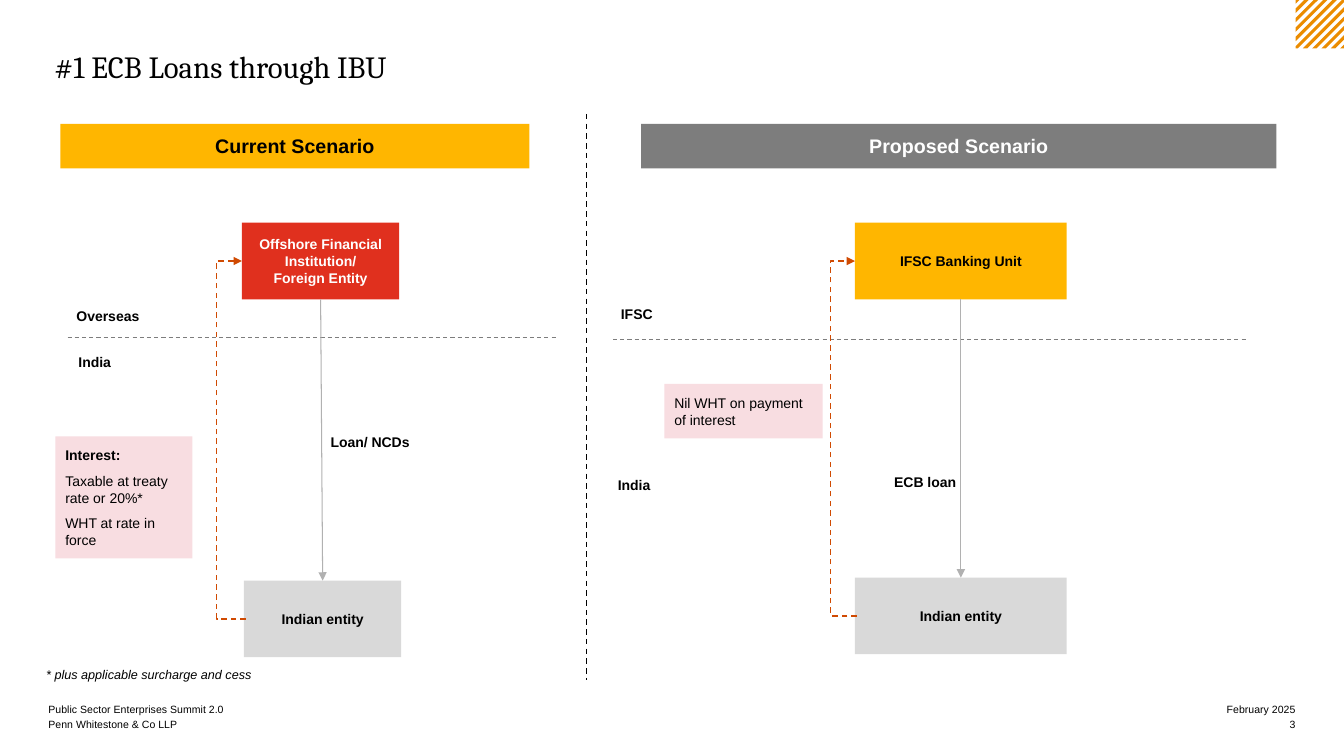
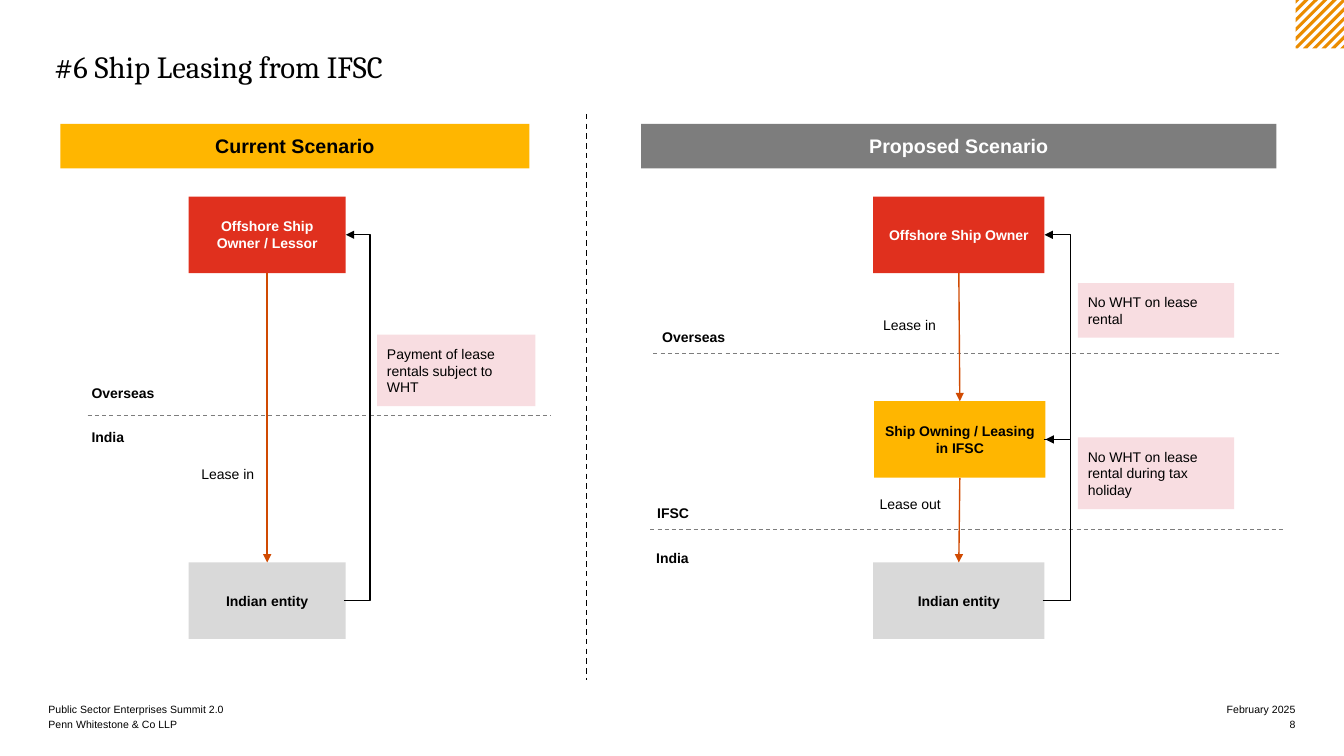
import dataclasses
import typing

import lxml.etree
import pptx
import pptx.dml.color
import pptx.enum.dml
import pptx.enum.shapes
import pptx.enum.text
import pptx.oxml.ns
import pptx.util

Inches = pptx.util.Inches
Align = pptx.enum.text.PP_ALIGN
Anchor = pptx.enum.text.MSO_ANCHOR
Connector = pptx.enum.shapes.MSO_CONNECTOR

BLACK, WHITE = "000000", "FFFFFF"
AMBER, RED, PINK = "FFB600", "E0301E", "F8DDE1"
DARK_GREY, MID_GREY, LIGHT_GREY = "7D7D7D", "B1B1B1", "D9D9D9"
RUST, STRIPE = "D04A02", "EB8C00"
SLIDE_WIDTH, SLIDE_HEIGHT = 13.33, 7.5
CURRENT_BOX = (0.6, 1.23, 4.65, 5.26)
PROPOSED_BOX = (6.36, 1.23, 6.3, 5.26)
ENTITY_HEIGHT = 0.76


def rgb(value):
    return pptx.dml.color.RGBColor.from_string(value)


def write(frame, paragraphs, size=10, color=BLACK, bold=False, italic=False,
          font="Arial", align=Align.LEFT, anchor=Anchor.MIDDLE,
          insets=(0.1, 0.1), gap=0):
    frame.word_wrap = True
    frame.auto_size = pptx.enum.text.MSO_AUTO_SIZE.NONE
    frame.vertical_anchor = anchor
    frame.margin_left = frame.margin_right = Inches(insets[0])
    frame.margin_top = frame.margin_bottom = Inches(insets[1])
    for index, content in enumerate(paragraphs):
        paragraph = frame.paragraphs[0] if index == 0 else frame.add_paragraph()
        paragraph.alignment = align
        paragraph.space_before = pptx.util.Pt(gap if index else 0)
        paragraph.space_after = pptx.util.Pt(gap)
        text, run_bold = content if isinstance(content, tuple) else (content, bold)
        run = paragraph.add_run()
        run.text = text
        run.font.name = font
        run.font.size = pptx.util.Pt(size)
        run.font.bold = run_bold
        run.font.italic = italic
        run.font.color.rgb = rgb(color)


def add_text(slide, box, paragraphs, **style):
    caption = slide.shapes.add_textbox(*map(Inches, box))
    write(caption.text_frame, paragraphs, **style)


def add_block(slide, box, fill, paragraphs, **style):
    block = slide.shapes.add_shape(
        pptx.enum.shapes.MSO_SHAPE.RECTANGLE, *map(Inches, box))
    block.shadow.inherit = False
    block.fill.solid()
    block.fill.fore_color.rgb = rgb(fill)
    block.line.fill.background()
    write(block.text_frame, paragraphs, **style)


def add_line(slide, start, end, color, width=1.0, dashed=False, arrow=False,
             lane=None):
    kind = Connector.STRAIGHT if lane is None else Connector.ELBOW
    line = slide.shapes.add_connector(kind, *map(Inches, (*start, *end)))
    line.line.color.rgb = rgb(color)
    line.line.width = pptx.util.Pt(width)
    if dashed:
        line.line.dash_style = pptx.enum.dml.MSO_LINE.DASH
    qn = pptx.oxml.ns.qn
    properties = line._element.spPr
    if arrow:
        lxml.etree.SubElement(
            properties.find(qn("a:ln")), qn("a:tailEnd"), type="triangle")
    lxml.etree.SubElement(properties, qn("a:effectLst"))
    if lane is not None:
        ratio = (lane - start[0]) / (end[0] - start[0])
        guides = properties.find(qn("a:prstGeom")).get_or_add_avLst()
        lxml.etree.SubElement(guides, qn("a:gd"), name="adj1",
                              fmla=f"val {round(ratio * 100000)}")


@dataclasses.dataclass
class Entity:
    left: float
    top: float
    width: float

    @property
    def center(self):
        return self.left + self.width / 2

    @property
    def middle(self):
        return self.top + ENTITY_HEIGHT / 2

    @property
    def bottom(self):
        return self.top + ENTITY_HEIGHT


@dataclasses.dataclass
class Scenario:
    slide: typing.Any
    left: float
    top: float
    width: float
    height: float

    def place(self, x, y, width, height):
        return self.left + x, self.top + y, width, height

    def header(self, title, fill, color):
        add_block(self.slide, self.place(0, 0, self.width, 0.44), fill, [title],
                  size=14, color=color, bold=True, align=Align.CENTER)

    def entity(self, x, y, width, fill, *lines):
        entity = Entity(self.left + x, self.top + y, width)
        add_block(self.slide, self.place(x, y, width, ENTITY_HEIGHT), fill, lines,
                  color=WHITE if fill == RED else BLACK, bold=True,
                  align=Align.CENTER, insets=(0.1, 0.05))
        return entity

    def label(self, x, y, width, text, bold=True, align=Align.LEFT):
        add_text(self.slide, self.place(x, y, width, 0.37), [text],
                 bold=bold, align=align)

    def note(self, x, y, width, height, *paragraphs):
        add_block(self.slide, self.place(x, y, width, height), PINK, paragraphs,
                  gap=3 if len(paragraphs) > 1 else 0)

    def border(self, x, y, length):
        start = self.left + x, self.top + y
        add_line(self.slide, start, (start[0] + length, start[1]), DARK_GREY,
                 width=0.75, dashed=True)

    def flow(self, source, target, color, width=1.0):
        add_line(self.slide, (source.center, source.bottom),
                 (target.center, target.top), color, width, arrow=True)

    def payment(self, payer, payee, x, color, dashed=False):
        lane = self.left + x
        if lane < payer.left:
            start_x, end_x = payer.left + 0.02, payee.left
        else:
            start_x = payer.left + payer.width - 0.02
            end_x = payee.left + payee.width
        add_line(self.slide, (start_x, payer.middle), (end_x, payee.middle),
                 color, dashed=dashed, arrow=True, lane=lane)


def stripe_ends(total, side):
    if total <= side:
        return (total, 0), (0, total)
    return (side, total - side), (total - side, side)


def corner_stripes(slide, left, top, side):
    corner = slide.shapes.add_group_shape()
    pitch, half_width = 0.093, 0.022
    for index in range(11):
        center = side + pitch * (index - 5)
        near = max(center - half_width, 0)
        far = min(center + half_width, 2 * side)
        near_top, near_bottom = stripe_ends(near, side)
        far_top, far_bottom = stripe_ends(far, side)
        crosses = near < side < far
        outline = [near_top, *([(side, 0)] if crosses else []), far_top,
                   far_bottom, *([(0, side)] if crosses else []), near_bottom]
        points = [(Inches(left + x), Inches(top + y)) for x, y in outline]
        builder = corner.shapes.build_freeform(*points[0])
        builder.add_line_segments(points[1:])
        stripe = builder.convert_to_shape()
        stripe.shadow.inherit = False
        stripe.fill.solid()
        stripe.fill.fore_color.rgb = rgb(STRIPE)
        stripe.line.fill.background()


def footer(slide, left, top, width, page):
    date_width = 1.93
    columns = (
        (left, 5.99, Align.LEFT,
         ("Public Sector Enterprises Summit 2.0", "Penn Whitestone & Co LLP")),
        (left + width - date_width, date_width, Align.RIGHT,
         ("February 2025", page)),
    )
    for x, column_width, align, lines in columns:
        for row, text in enumerate(lines):
            add_text(slide, (x, top + 0.15 * row, column_width, 0.15), [text],
                     size=7.5, align=align, anchor=Anchor.BOTTOM, insets=(0, 0))


def comparison_slide(deck, title, page, draw_current, draw_proposed):
    slide = deck.slides.add_slide(deck.slide_layouts[5])
    heading = slide.shapes.title
    heading.left, heading.top = Inches(0.54), Inches(0.47)
    heading.width, heading.height = Inches(12.36), Inches(1.28)
    write(heading.text_frame, [title], size=22, font="Cambria",
          anchor=Anchor.TOP, insets=(0, 0))
    corner_stripes(slide, 12.85, 0, 0.48)
    add_line(slide, (5.82, 1.13), (5.82, 6.75), BLACK, dashed=True)
    current = Scenario(slide, *CURRENT_BOX)
    current.header("Current Scenario", AMBER, BLACK)
    draw_current(current)
    proposed = Scenario(slide, *PROPOSED_BOX)
    proposed.header("Proposed Scenario", DARK_GREY, WHITE)
    draw_proposed(proposed)
    footer(slide, 0.48, 6.95, 12.37, page)


def offshore_loan(region):
    lender = region.entity(1.8, 0.98, 1.56, RED,
                           "Offshore Financial Institution/", "Foreign Entity")
    borrower = region.entity(1.82, 4.53, 1.56, LIGHT_GREY, "Indian entity")
    region.label(0.06, 1.72, 1.18, "Overseas")
    region.border(0.07, 2.12, 4.84)
    region.label(0.08, 2.18, 0.87, "India")
    region.payment(borrower, lender, 1.55, RUST, dashed=True)
    region.flow(lender, borrower, MID_GREY, 0.75)
    region.label(2.58, 2.97, 1.4, "Loan/ NCDs")
    region.note(-0.05, 3.1, 1.36, 1.21, ("Interest:", True),
                "Taxable at treaty rate or 20%*", "WHT at rate in force")
    add_text(region.slide, region.place(-0.24, 5.34, 6.67, 0.25),
             ["* plus applicable surcharge and cess"], size=9, italic=True,
             anchor=Anchor.TOP, insets=(0.1, 0.05))


def banking_unit_loan(region):
    lender = region.entity(2.12, 0.98, 2.1, AMBER, "IFSC Banking Unit")
    borrower = region.entity(2.12, 4.5, 2.1, LIGHT_GREY, "Indian entity")
    region.label(-0.3, 1.7, 1.06, "IFSC")
    region.border(-0.28, 2.14, 6.29)
    region.label(-0.33, 3.4, 0.87, "India")
    region.flow(lender, borrower, MID_GREY, 0.75)
    region.label(2.41, 3.37, 1.06, "ECB loan")
    region.payment(borrower, lender, 1.88, RUST, dashed=True)
    region.note(0.23, 2.58, 1.57, 0.54, "Nil WHT on payment of interest")


def offshore_lease(region):
    owner = region.entity(1.27, 0.72, 1.56, RED, "Offshore Ship Owner / Lessor")
    lessee = region.entity(1.27, 4.35, 1.56, LIGHT_GREY, "Indian entity")
    region.label(0.21, 2.48, 1.12, "Overseas")
    region.border(0.27, 2.89, 4.6)
    region.label(0.21, 2.92, 0.87, "India")
    region.flow(owner, lessee, RUST)
    region.label(1.3, 3.29, 0.97, "Lease in", bold=False)
    region.payment(lessee, owner, 3.07, BLACK)
    region.note(3.14, 2.09, 1.57, 0.71, "Payment of lease rentals subject to WHT")


def ifsc_lease(region):
    owner = region.entity(2.3, 0.72, 1.7, RED, "Offshore Ship Owner")
    lessor = region.entity(2.31, 2.75, 1.7, AMBER, "Ship Owning / Leasing in IFSC")
    lessee = region.entity(2.3, 4.35, 1.7, LIGHT_GREY, "Indian entity")
    region.label(0.11, 1.93, 0.86, "Overseas")
    region.border(0.12, 2.28, 6.22)
    region.label(0.06, 3.67, 1.06, "IFSC")
    region.border(0.09, 4.02, 6.3)
    region.label(0.05, 4.12, 0.87, "India")
    region.flow(owner, lessor, RUST)
    region.label(2.03, 1.81, 0.99, "Lease in", bold=False, align=Align.RIGHT)
    region.flow(lessor, lessee, RUST)
    region.label(2.04, 3.58, 1.03, "Lease out", bold=False, align=Align.RIGHT)
    region.payment(lessee, lessor, 4.26, BLACK)
    region.payment(lessor, owner, 4.26, BLACK)
    region.note(4.33, 1.58, 1.55, 0.54, "No WHT on lease rental")
    region.note(4.33, 3.11, 1.55, 0.71,
                "No WHT on lease rental during tax holiday")


def main():
    deck = pptx.Presentation()
    deck.slide_width = Inches(SLIDE_WIDTH)
    deck.slide_height = Inches(SLIDE_HEIGHT)
    comparison_slide(deck, "#1 ECB Loans through IBU", "3",
                     offshore_loan, banking_unit_loan)
    comparison_slide(deck, "#6 Ship Leasing from IFSC", "8",
                     offshore_lease, ifsc_lease)
    deck.save("out.pptx")


if __name__ == "__main__":
    main()
